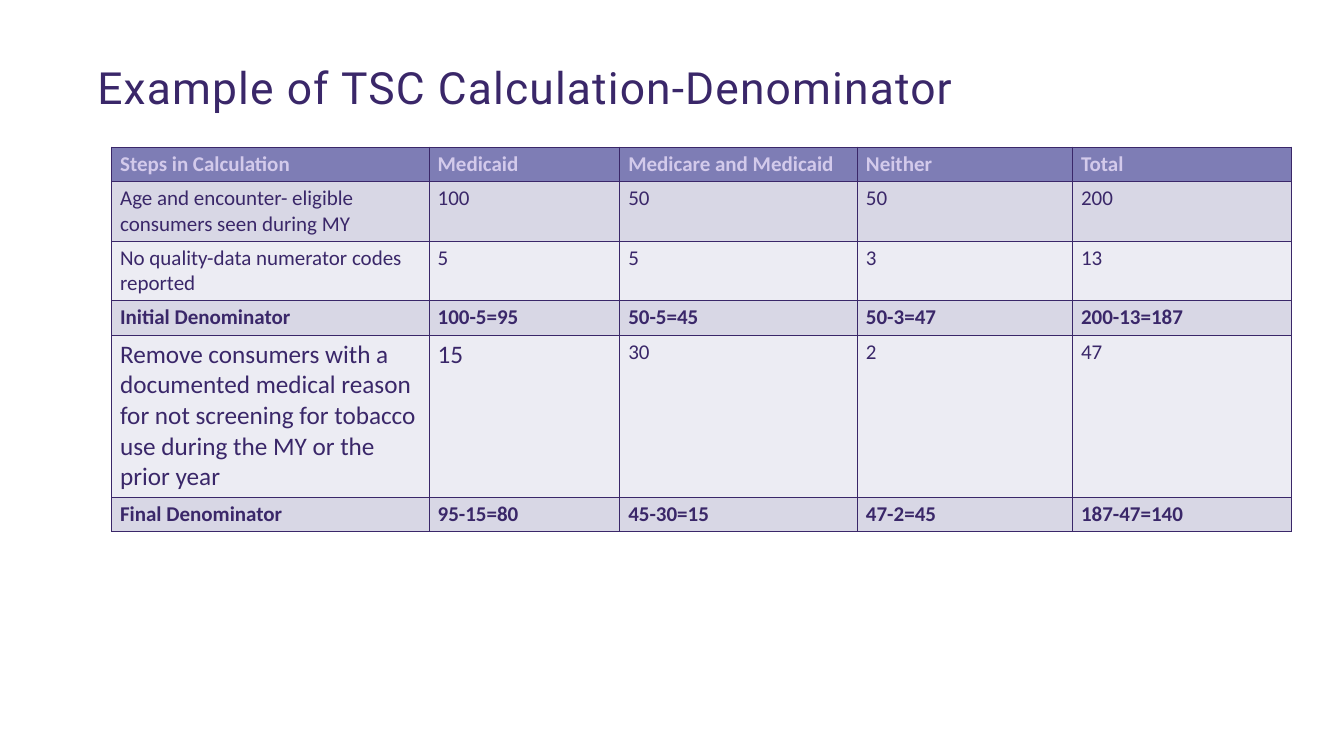
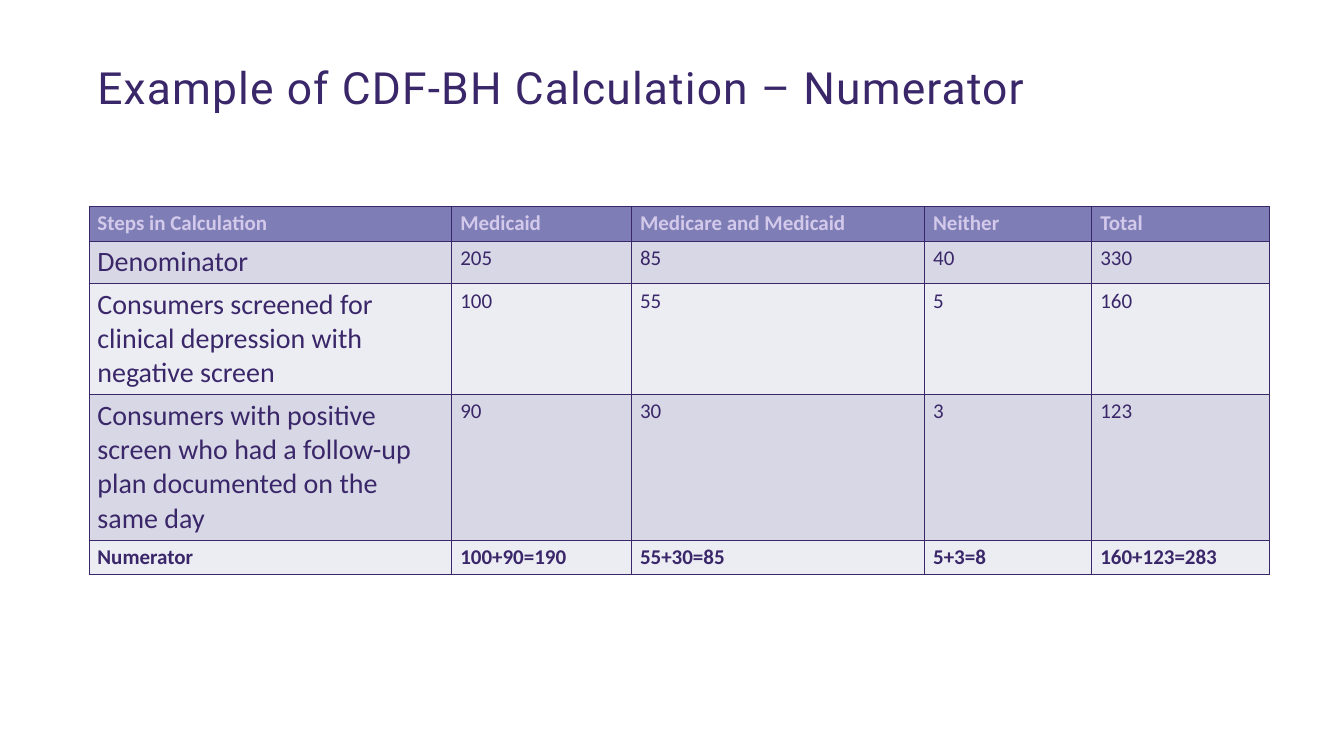
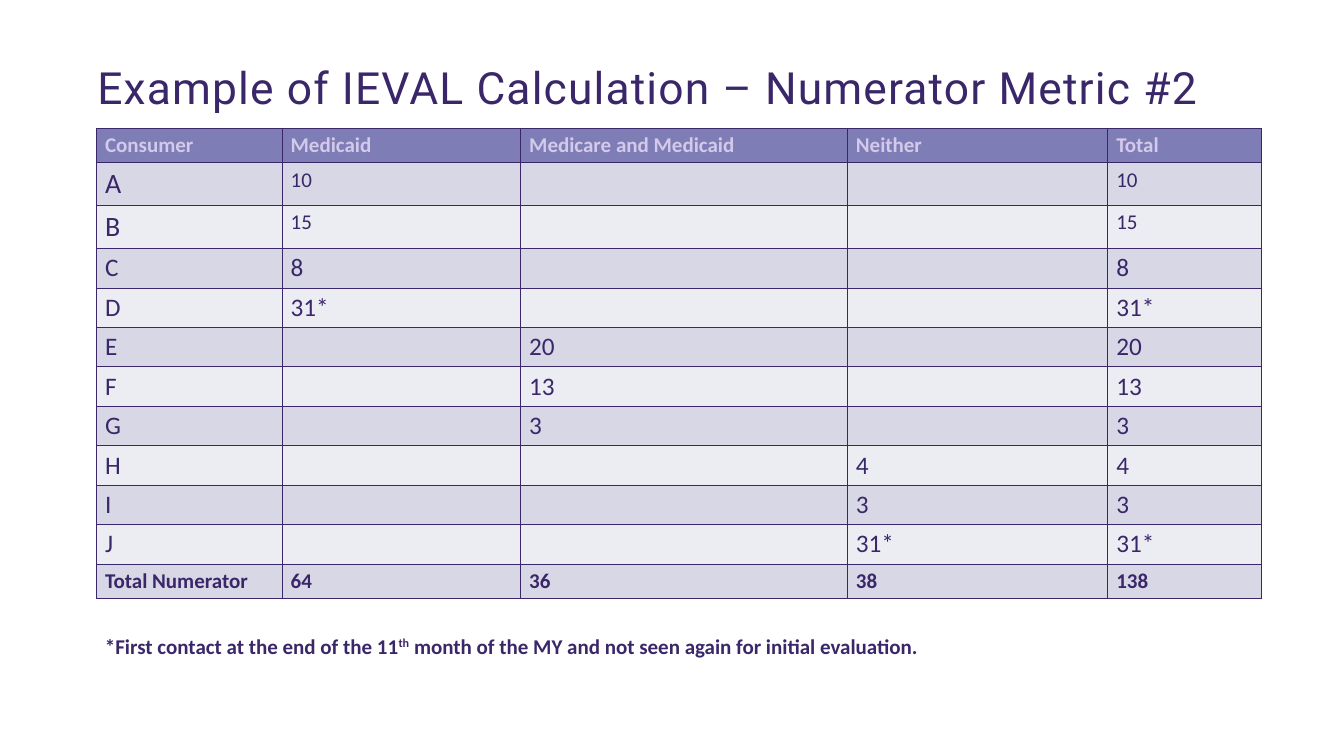
from dataclasses import dataclass

from lxml import etree
from pptx import Presentation
from pptx.dml.color import RGBColor
from pptx.enum.text import MSO_ANCHOR, PP_ALIGN
from pptx.oxml.ns import qn
from pptx.slide import Slide
from pptx.text.text import TextFrame, _Run
from pptx.util import Emu, Inches, Pt

TOP = MSO_ANCHOR.TOP
LEFT = PP_ALIGN.LEFT

# The slide is a grid of 16 columns by 9 rows; every length counts grid cells
GRID_COLUMNS, GRID_ROWS = 16, 9
CELL = Inches(1)


@dataclass(frozen=True)
class Theme:
    background: str = "FFFFFF"
    ink: str = "3A2769"
    header_ink: str = "D3CAEB"
    header_fill: str = "7E7DB5"
    bands: tuple[str, str] = ("D8D7E5", "ECECF3")
    title_font: str = "Roboto"
    body_font: str = "Calibri"
    title_size: float = 38
    body_size: float = 18
    medium_size: float = 21.6
    large_size: float = 24
    title_line_spacing: float = 0.9
    title_tracking: float = 1
    body_line_height: float = 1.22
    border_width: float = 1
    cell_padding: float = 0.1
    superscript: int = 30


THEME = Theme()
LARGE_LABEL = (THEME.large_size, THEME.body_size)
MEDIUM = (THEME.medium_size,)


@dataclass(frozen=True)
class Box:
    left: float
    top: float
    width: float
    height: float


@dataclass(frozen=True)
class Step:
    """A table row; the last of its sizes holds for all remaining cells."""
    cells: tuple[str, ...]
    sizes: tuple[float, ...] = (THEME.body_size,)
    lines: int = 1
    bold: bool = False

    def size(self, column: int) -> float:
        return self.sizes[min(column, len(self.sizes) - 1)]

    @property
    def height(self) -> float:
        text_points = self.lines * self.size(0) * THEME.body_line_height
        return round(text_points / 72 + THEME.cell_padding, 2)


@dataclass(frozen=True)
class Example:
    title: str
    title_box: Box
    left: float
    top: float
    columns: tuple[float, ...]
    first_heading: str
    steps: tuple[Step, ...]
    footnote: tuple[tuple[str, bool], ...] = ()


def grid(count: float) -> Emu:
    return Emu(round(count * CELL))


def style_run(run: _Run, size: float, color: str, font: str, bold: bool = False) -> None:
    run.font.size = Pt(size)
    run.font.name = font
    run.font.bold = bold
    run.font.color.rgb = RGBColor.from_string(color)


def add_text_box(slide: Slide, box: Box) -> TextFrame:
    frame = slide.shapes.add_textbox(
        grid(box.left), grid(box.top), grid(box.width), grid(box.height)).text_frame
    frame.word_wrap = True
    frame.vertical_anchor = TOP
    return frame


def add_title(slide: Slide, title: str, box: Box) -> None:
    frame = add_text_box(slide, box)
    frame.text = title
    paragraph = frame.paragraphs[0]
    paragraph.alignment = LEFT
    paragraph.line_spacing = THEME.title_line_spacing
    run = paragraph.runs[0]
    style_run(run, THEME.title_size, THEME.ink, THEME.title_font)
    run._r.get_or_add_rPr().set("spc", str(round(THEME.title_tracking * 100)))


def add_borders(cell) -> None:
    properties = cell._tc.get_or_add_tcPr()
    for position, side in enumerate(("a:lnL", "a:lnR", "a:lnT", "a:lnB")):
        line = etree.Element(qn(side), w=str(Pt(THEME.border_width)))
        fill = etree.SubElement(line, qn("a:solidFill"))
        etree.SubElement(fill, qn("a:srgbClr"), val=THEME.ink)
        properties.insert(position, line)


def add_steps_table(slide: Slide, example: Example) -> None:
    header = Step((example.first_heading, "Medicaid", "Medicare and Medicaid",
                   "Neither", "Total"), bold=True)
    rows = (header, *example.steps)
    table = slide.shapes.add_table(
        len(rows), len(example.columns), grid(example.left), grid(example.top),
        grid(sum(example.columns)), grid(sum(row.height for row in rows))).table
    table.first_row = table.horz_banding = False
    for column, width in zip(table.columns, example.columns):
        column.width = grid(width)
    for r, step in enumerate(rows):
        table.rows[r].height = grid(step.height)
        fill = THEME.bands[(r - 1) % 2] if r else THEME.header_fill
        ink = THEME.ink if r else THEME.header_ink
        for c, text in enumerate(step.cells):
            cell = table.cell(r, c)
            cell.fill.solid()
            cell.fill.fore_color.rgb = RGBColor.from_string(fill)
            add_borders(cell)
            if text:
                cell.text_frame.text = text
                style_run(cell.text_frame.paragraphs[0].runs[0], step.size(c),
                          ink, THEME.body_font, step.bold)


def add_footnote(slide: Slide, parts: tuple[tuple[str, bool], ...], box: Box) -> None:
    paragraph = add_text_box(slide, box).paragraphs[0]
    for text, raised in parts:
        run = paragraph.add_run()
        run.text = text
        style_run(run, THEME.body_size, THEME.ink, THEME.body_font, bold=True)
        if raised:
            run._r.get_or_add_rPr().set("baseline", str(THEME.superscript * 1000))


# Content of the three examples
EXAMPLES = (
    Example(
        "Example of TSC Calculation-Denominator", Box(1.06, 0.74, 12, 1.54),
        1.33, 1.75, (3.78, 2.27, 2.83, 2.56, 2.6), "Steps in Calculation",
        (
            Step(("Age and encounter- eligible consumers seen during MY",
                  "100", "50", "50", "200"), lines=2),
            Step(("No quality-data numerator codes reported",
                  "5", "5", "3", "13"), lines=2),
            Step(("Initial Denominator", "100-5=95", "50-5=45", "50-3=47",
                  "200-13=187"), bold=True),
            Step(("Remove consumers with a documented medical reason for not "
                  "screening for tobacco use during the MY or the prior year",
                  "15", "30", "2", "47"),
                 (THEME.medium_size, THEME.medium_size, THEME.body_size), lines=5),
            Step(("Final Denominator", "95-15=80", "45-30=15", "47-2=45",
                  "187-47=140"), bold=True),
        ),
    ),
    Example(
        "Example of CDF-BH Calculation – Numerator", Box(1.06, 0.74, 12, 1.54),
        1.06, 2.46, (4.32, 2.14, 3.49, 1.99, 2.12), "Steps in Calculation",
        (
            Step(("Denominator", "205", "85", "40", "330"), LARGE_LABEL),
            Step(("Consumers screened for clinical depression with negative screen",
                  "100", "55", "5", "160"), LARGE_LABEL, lines=3),
            Step(("Consumers with positive screen who had a follow-up plan "
                  "documented on the same day", "90", "30", "3", "123"),
                 LARGE_LABEL, lines=4),
            Step(("Numerator", "100+90=190", "55+30=85", "5+3=8",
                  "160+123=283"), bold=True),
        ),
    ),
    Example(
        "Example of IEVAL Calculation – Numerator Metric #2",
        Box(1.06, 0.74, 14.05, 0.79),
        1.15, 1.53, (2.21, 2.84, 3.89, 3.1, 1.83), "Consumer",
        (
            Step(("A", "10", "", "", "10"), LARGE_LABEL),
            Step(("B", "15", "", "", "15"), LARGE_LABEL),
            Step(("C", "8", "", "", "8"), MEDIUM),
            Step(("D", "31*", "", "", "31*"), MEDIUM),
            Step(("E", "", "20", "", "20"), MEDIUM),
            Step(("F", "", "13", "", "13"), MEDIUM),
            Step(("G", "", "3", "", "3"), MEDIUM),
            Step(("H", "", "", "4", "4"), MEDIUM),
            Step(("I", "", "", "3", "3"), MEDIUM),
            Step(("J", "", "", "31*", "31*"), MEDIUM),
            Step(("Total Numerator", "64", "36", "38", "138"), bold=True),
        ),
        (("*First contact at the end of the 11", False), ("th", True),
         (" month of the MY and not seen again for initial evaluation.", False)),
    ),
)


def main() -> None:
    deck = Presentation()
    deck.slide_width, deck.slide_height = grid(GRID_COLUMNS), grid(GRID_ROWS)
    blank = deck.slide_layouts[6]
    for example in EXAMPLES:
        slide = deck.slides.add_slide(blank)
        slide.background.fill.solid()
        slide.background.fill.fore_color.rgb = RGBColor.from_string(THEME.background)
        add_title(slide, example.title, example.title_box)
        add_steps_table(slide, example)
        if example.footnote:
            add_footnote(slide, example.footnote,
                         Box(example.left, 7.49, sum(example.columns), 0.4))
    deck.save("out.pptx")


if __name__ == "__main__":
    main()
